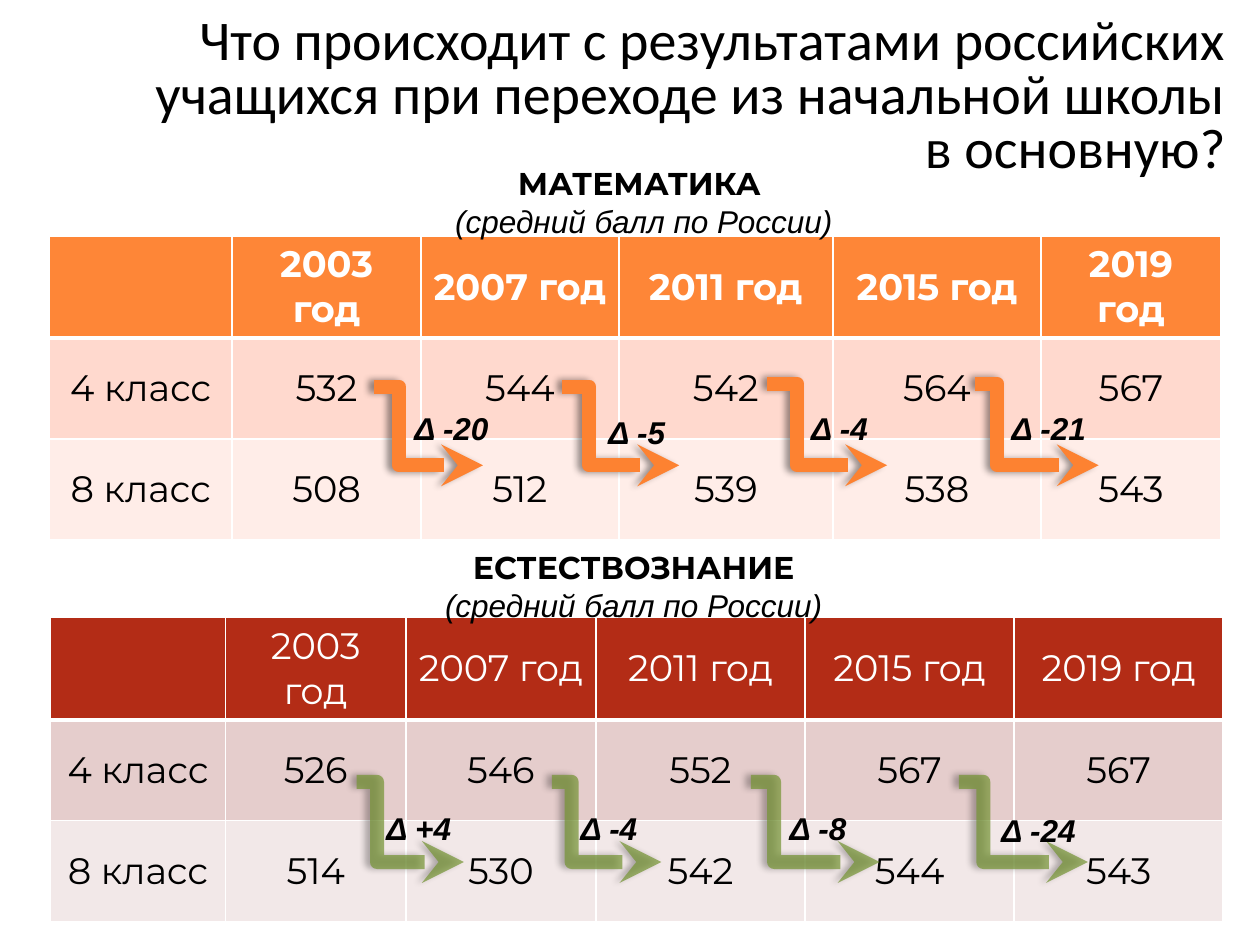
import pptx
import pptx.util
import pptx.dml.color
import pptx.enum.shapes
import pptx.enum.text
import pptx.oxml
import pptx.oxml.ns

Pt = pptx.util.Pt
RGBColor = pptx.dml.color.RGBColor
PP_ALIGN = pptx.enum.text.PP_ALIGN
ANCHOR = pptx.enum.text.MSO_ANCHOR
AUTO_SIZE = pptx.enum.text.MSO_AUTO_SIZE
NS = pptx.oxml.ns.nsdecls("a")

BLACK = RGBColor(0x00, 0x00, 0x00)
WHITE = RGBColor(0xFF, 0xFF, 0xFF)
ORANGE = RGBColor(0xFE, 0x86, 0x37)
PEACH = RGBColor(0xFF, 0xD9, 0xCE)
PALE_PEACH = RGBColor(0xFF, 0xED, 0xE8)
RED = RGBColor(0xB3, 0x2C, 0x16)
ROSE = RGBColor(0xE5, 0xCD, 0xCC)
PALE_ROSE = RGBColor(0xF2, 0xE8, 0xE8)
ARROW_ORANGE = RGBColor(0xFD, 0x82, 0x31)
ARROW_GREEN = RGBColor(0x76, 0x95, 0x35)

HEADER = ["", "2003 год", "2007 год", "2011 год", "2015 год", "2019 год"]
ROW_H = 57.6

MATH = dict(
    heading=("МАТЕМАТИКА ", (56.2, 90, 623.5, 51)),
    box=(28.2, 134.8),
    cols=[104.4, 108, 113, 122.4, 118.8, 103],
    fills=[ORANGE, PEACH, PALE_PEACH],
    bold=True,
    rows=[HEADER,
          ["4 класс", "532", "544", "542", "564", "567"],
          ["8 класс", "508", "512", "539", "538", "543"]],
    arrow=(ARROW_ORANGE, 100),
    # start x, start y, end x, end y, bend, label, label x, label y
    drops=[(213.6, 220.9, 276, 265.9, 0.23, "Δ -20", 229.7, 230.4),
           (321.3, 220.9, 388.1, 265.9, 0.23, "Δ -5", 340.6, 232.6),
           (438.5, 219.4, 506.9, 265.9, 0.25, "Δ -4", 456.5, 230.4),
           (557.3, 219.4, 627.8, 265.9, 0.18, "Δ -21", 571, 230.4)],
)
SCIENCE = dict(
    heading=("ЕСТЕСТВОЗНАНИЕ", (50.4, 309.6, 623.5, 51)),
    box=(28.8, 353),
    cols=[100.1, 103, 108.7, 119.5, 119.5, 119.5],
    fills=[RED, ROSE, PALE_ROSE],
    bold=False,
    rows=[HEADER,
          ["4 класс", "526", "546", "552", "567", "567"],
          ["8 класс", "514", "530", "542", "544", "543"]],
    arrow=(ARROW_GREEN, 71),
    drops=[(203.8, 446.8, 265, 492.6, 0.19, "Δ +4", 213.8, 458.6),
           (315.4, 446.8, 378, 492.6, 0.18, "Δ -4", 324.7, 458.6),
           (429.1, 446.8, 502.6, 492.6, 0.18, "Δ -8", 444.2, 458.6),
           (547.9, 446.8, 621.7, 492.6, 0.19, "Δ -24", 565.2, 460.1)],
)


def style(font, size, name, color, bold=False, italic=False):
    font.size, font.name = Pt(size), name
    font.bold, font.italic = bold, italic
    font.color.rgb = color


def add_title(s, x, y, w, h):
    sp = s.shapes.title
    sp.left, sp.top, sp.width, sp.height = Pt(x), Pt(y), Pt(w), Pt(h)
    tf = sp.text_frame
    tf.text = "Что происходит с результатами российских учащихся при переходе из начальной школы в основную?"
    tf.vertical_anchor = ANCHOR.MIDDLE
    tf.auto_size = AUTO_SIZE.NONE
    p = tf.paragraphs[0]
    p.alignment = PP_ALIGN.RIGHT
    p.line_spacing = 0.8
    style(p.runs[0].font, 32, "Calibri", BLACK)


def add_text_box(shapes, x, y, w, h):
    tf = shapes.add_textbox(Pt(x), Pt(y), Pt(w), Pt(h)).text_frame
    tf.word_wrap = True
    tf.auto_size = AUTO_SIZE.SHAPE_TO_FIT_TEXT
    return tf


def add_heading(s, subject, box):
    p = add_text_box(s.shapes, *box).paragraphs[0]
    p.alignment = PP_ALIGN.CENTER
    r = p.add_run()
    r.text = subject
    style(r.font, 18, "Montserrat", BLACK, bold=True)
    p.add_line_break()
    r = p.add_run()
    r.text = "(средний балл по России)"
    style(r.font, 18, "Arial", BLACK, italic=True)


def set_borders(cell, widths):
    """Draw white borders; widths are for left, right, top and bottom."""
    tc_pr = cell._tc.get_or_add_tcPr()
    for i, (side, width) in enumerate(zip("LRTB", widths)):
        tc_pr.insert(i, pptx.oxml.parse_xml(
            f'<a:ln{side} {NS} w="{Pt(width)}"><a:solidFill>'
            f'<a:srgbClr val="{WHITE}"/></a:solidFill></a:ln{side}>'))


def add_score_table(s, x, y, cols, rows, fills, bold):
    frame = s.shapes.add_table(len(rows), len(cols), Pt(x), Pt(y),
                               Pt(sum(cols)), Pt(ROW_H * len(rows)))
    table = frame.table
    for column, width in zip(table.columns, cols):
        column.width = Pt(width)
    for i, (texts, fill) in enumerate(zip(rows, fills)):
        table.rows[i].height = Pt(ROW_H)
        for j, text in enumerate(texts):
            cell = table.cell(i, j)
            cell.text = text
            cell.vertical_anchor = ANCHOR.MIDDLE
            cell.fill.solid()
            cell.fill.fore_color.rgb = fill
            p = cell.text_frame.paragraphs[0]
            p.alignment = PP_ALIGN.CENTER
            is_header = i == 0
            style(p.font, 21, "Montserrat", WHITE if is_header else BLACK,
                  bold=bold and is_header)
            for r in p.runs:
                style(r.font, 21, "Montserrat", WHITE if is_header else BLACK,
                      bold=bold and is_header)
            set_borders(cell, (1, 1, 3 if i == 1 else 1, 3 if is_header else 1))


def add_bent_arrow(shapes, x1, y1, x2, y2, bend, color, opacity):
    c = shapes.add_connector(pptx.enum.shapes.MSO_CONNECTOR.ELBOW,
                             Pt(x1), Pt(y1), Pt(x2), Pt(y2))
    c.line.width = Pt(8)
    c.line.color.rgb = color
    sp_pr = c._element.spPr
    guides = sp_pr.find(pptx.oxml.ns.qn("a:prstGeom")).get_or_add_avLst()
    guides.append(pptx.oxml.parse_xml(
        f'<a:gd {NS} name="adj1" fmla="val {round(bend * 100000)}"/>'))
    ln = c.line._get_or_add_ln()
    if opacity < 100:
        clr = ln.find(".//" + pptx.oxml.ns.qn("a:srgbClr"))
        clr.append(pptx.oxml.parse_xml(f'<a:alpha {NS} val="{opacity * 1000}"/>'))
    ln.append(pptx.oxml.parse_xml(f'<a:round {NS}/>'))
    ln.append(pptx.oxml.parse_xml(f'<a:tailEnd {NS} type="stealth"/>'))
    sp_pr.append(pptx.oxml.parse_xml(
        f'<a:effectLst {NS}><a:outerShdw blurRad="{Pt(4)}" dist="{Pt(3)}" '
        f'dir="10800000" algn="r" rotWithShape="0"><a:srgbClr val="{BLACK}">'
        f'<a:alpha val="40000"/></a:srgbClr></a:outerShdw></a:effectLst>'))


def add_drops(s, drops, color, opacity):
    """Group the arrows from class 4 to class 8 with their differences."""
    shapes = s.shapes.add_group_shape().shapes
    for x1, y1, x2, y2, bend, *_ in drops:
        add_bent_arrow(shapes, x1, y1, x2, y2, bend, color, opacity)
    for *_, label, x, y in drops:
        tf = add_text_box(shapes, x, y, 67.7, 29)
        tf.text = label
        style(tf.paragraphs[0].runs[0].font, 18, "Arial", BLACK,
              bold=True, italic=True)


def main():
    prs = pptx.Presentation()
    prs.slide_width, prs.slide_height = Pt(720), Pt(540)
    s = prs.slides.add_slide(prs.slide_layouts[5])
    add_title(s, 73.4, 0, 634.3, 112.3)
    for subject in (MATH, SCIENCE):
        add_score_table(s, *subject["box"], subject["cols"], subject["rows"],
                        subject["fills"], subject["bold"])
    for subject in (MATH, SCIENCE):
        add_heading(s, *subject["heading"])
        add_drops(s, subject["drops"], *subject["arrow"])
    prs.save("out.pptx")


if __name__ == "__main__":
    main()
